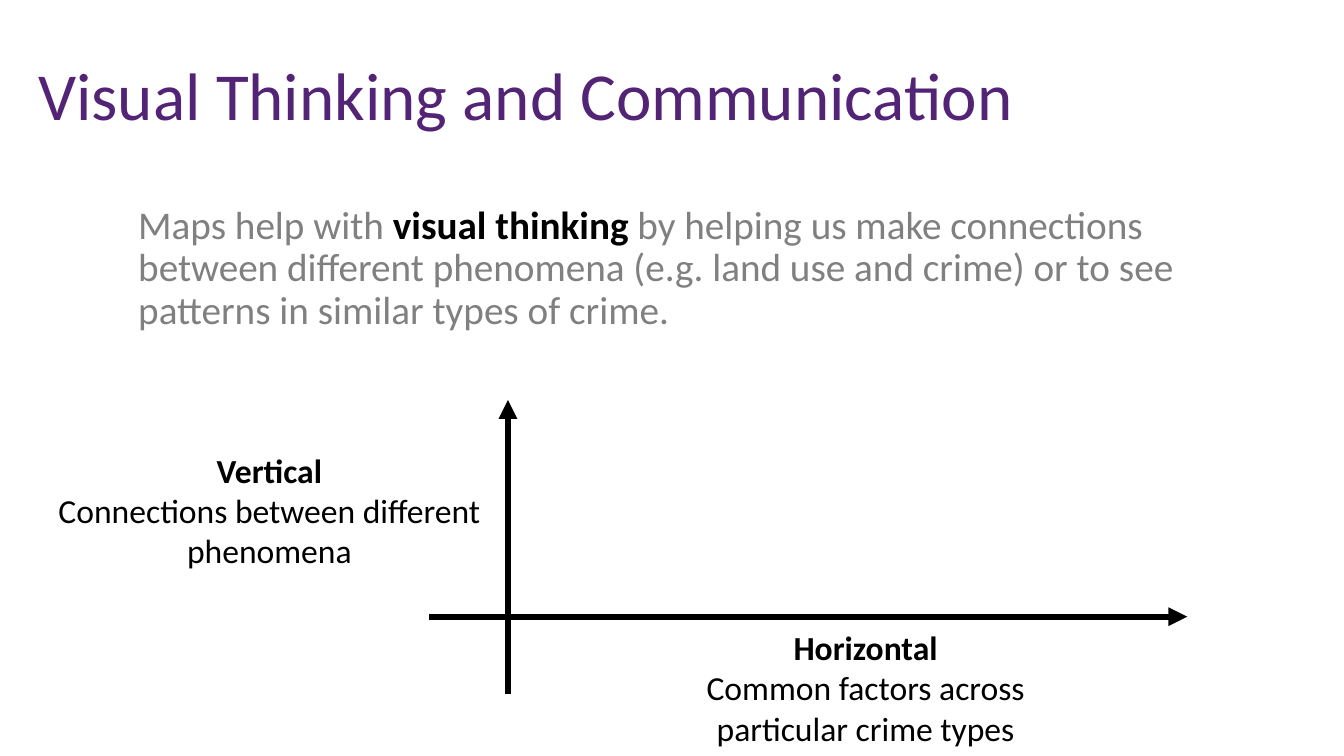
from pptx import Presentation
from pptx.dml.color import RGBColor
from pptx.enum.shapes import MSO_CONNECTOR
from pptx.enum.text import MSO_ANCHOR, MSO_AUTO_SIZE, PP_ALIGN
from pptx.oxml.ns import qn
from pptx.util import Cm, Pt
from lxml import etree

STRAIGHT = MSO_CONNECTOR.STRAIGHT
MIDDLE, TOP = MSO_ANCHOR.MIDDLE, MSO_ANCHOR.TOP
LEFT, CENTER = PP_ALIGN.LEFT, PP_ALIGN.CENTER
NO_FIT, GROW = MSO_AUTO_SIZE.NONE, MSO_AUTO_SIZE.SHAPE_TO_FIT_TEXT

PURPLE = RGBColor(0x53, 0x24, 0x76)
GRAY = RGBColor(0x80, 0x80, 0x80)
BLACK = RGBColor(0, 0, 0)
FONT = "Calibri"

TITLE = "Visual Thinking and Communication"
# text, bold
BODY = [
    ("Maps help with ", False),
    ("visual thinking ", True),
    ("by helping us make connections between different phenomena "
     "(e.g. land use and crime) or to see patterns in similar types of crime.", False),
]
# Sizes and places in cm: left, top, width, height
TITLE_BOX = (0.71, 0.64, 29.21, 3.68)
BODY_BOX = (3.23, 5.05, 29.21, 3.91)
# Axes cross at (CROSS_X, CROSS_Y): start x, start y, end x, end y
CROSS_X, CROSS_Y = 12.8, 15.54
AXES = [
    (CROSS_X, 17.48, CROSS_X, 10.08),
    (10.82, CROSS_Y, 29.92, CROSS_Y),
]
# heading, text, box
LABELS = [
    ("Horizontal", "Common factors across particular crime types",
     (16.0, 15.67, 11.63, 3.33)),
    ("Vertical", "Connections between different phenomena",
     (1.09, 11.2, 11.4, 3.33)),
]


def style(para, size, color, align, bold=False):
    para.alignment = align
    font = para.font
    font.name, font.size, font.bold = FONT, Pt(size), bold
    font.color.rgb = color


def place(holder, box, anchor):
    """Move a placeholder to box and return its first paragraph."""
    holder.left, holder.top, holder.width, holder.height = map(Cm, box)
    frame = holder.text_frame
    frame.auto_size, frame.vertical_anchor = NO_FIT, anchor
    para = frame.paragraphs[0]
    para.line_spacing = 0.9
    return para


def add_axis(slide, ends):
    line = slide.shapes.add_connector(STRAIGHT, *map(Cm, ends))
    line.line.color.rgb = BLACK
    line.line.width = Pt(4.5)
    etree.SubElement(line.line._get_or_add_ln(), qn("a:tailEnd"), type="triangle")
    etree.SubElement(line._element.spPr, qn("a:effectLst"))


def add_label(slide, head, text, box):
    frame = slide.shapes.add_textbox(*map(Cm, box)).text_frame
    frame.word_wrap, frame.auto_size = True, GROW
    frame.text = f"{head}\n{text}"
    for para, bold in zip(frame.paragraphs, (True, False)):
        style(para, 24, BLACK, CENTER, bold)


def main():
    deck = Presentation()
    deck.slide_width, deck.slide_height = Cm(33.87), Cm(19.05)
    slide = deck.slides.add_slide(deck.slide_layouts[1])

    title = place(slide.shapes.title, TITLE_BOX, MIDDLE)
    title.text = TITLE
    style(title, 48, PURPLE, LEFT)

    body = place(slide.placeholders[1], BODY_BOX, TOP)
    style(body, 28, GRAY, LEFT)
    body.space_before = Pt(10)
    props = body._p.get_or_add_pPr()
    props.set("marL", "0")
    props.set("indent", "0")
    props.insert_element_before(
        props.makeelement(qn("a:buNone")), "a:tabLst", "a:defRPr", "a:extLst")
    for text, bold in BODY:
        run = body.add_run()
        run.text = text
        run.font.bold = bold
        run.font.color.rgb = BLACK if bold else GRAY

    for ends in AXES:
        add_axis(slide, ends)
    for label in LABELS:
        add_label(slide, *label)
    deck.save("out.pptx")


if __name__ == "__main__":
    main()
